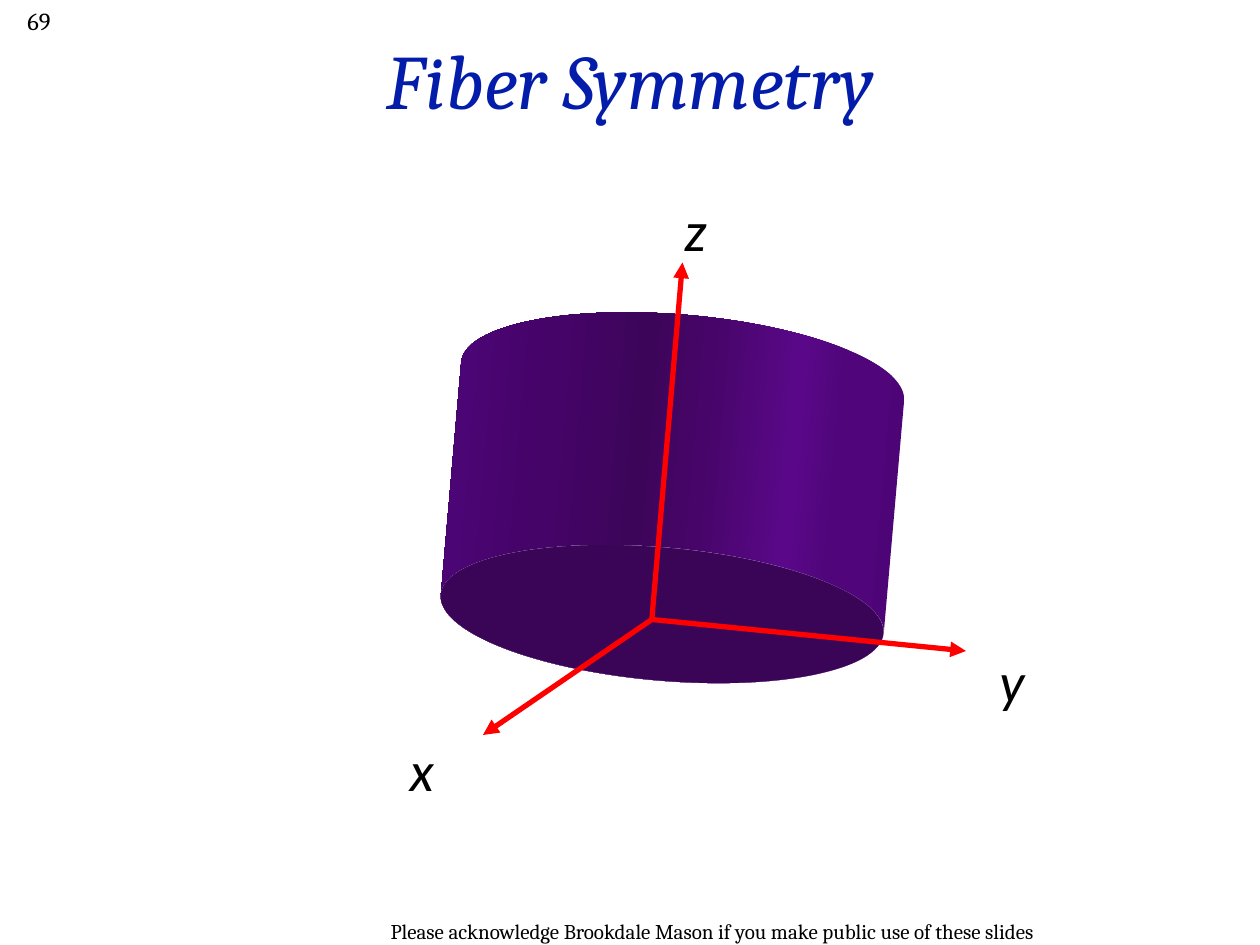
from copy import deepcopy

from lxml.etree import SubElement
from pptx import Presentation
from pptx.dml.color import RGBColor
from pptx.enum.shapes import MSO_CONNECTOR, MSO_SHAPE
from pptx.enum.text import MSO_ANCHOR, PP_ALIGN
from pptx.oxml.ns import qn
from pptx.util import Pt

THEME = {
    "title": RGBColor.from_string("031CAA"),
    "text": RGBColor.from_string("000000"),
    "axis": RGBColor.from_string("FF0000"),
    "base": RGBColor.from_string("3A0557"),
    # position in percent from the right edge of the wall, colour
    "wall": [(0, "4C0476"), (18, "50067A"), (27, "5A0889"), (45, "470569"),
             (57, "3D055A"), (75, "450468"), (100, "4E0579")],
    "serif": "Cambria",
    "sans": "Calibri",
    "title_size": Pt(44),
    "axis_size": Pt(32),
    "number_size": Pt(14),
    "footer_size": Pt(12),
}


def write(box, text, font, size, color, align, italic=False):
    box.text_frame.text = text
    para = box.text_frame.paragraphs[0]
    para.alignment = align
    span = para.runs[0].font
    span.name, span.size, span.italic = font, size, italic
    span.color.rgb = color


def add_solid(preset, center_x, center_y, width, height, rotation):
    """Add an unlined preset shape around its centre."""
    solid = page.shapes.add_shape(
        preset, Pt(center_x - width / 2), Pt(center_y - height / 2),
        Pt(width), Pt(height))
    solid.rotation = rotation
    solid.shadow.inherit = False
    solid.line.fill.background()
    return solid


deck = Presentation()
deck.slide_width, deck.slide_height = Pt(720), Pt(540)
page = deck.slides.add_slide(deck.slide_layouts[5])

# Title
title = page.shapes.title
title.left, title.top, title.width, title.height = Pt(0), Pt(0), Pt(720), Pt(90)
title.text_frame.vertical_anchor = MSO_ANCHOR.MIDDLE
write(title, "Fiber Symmetry", THEME["serif"], THEME["title_size"],
      THEME["title"], PP_ALIGN.CENTER, italic=True)

# Cylinder: a can turned over so that its flat end faces down, and its base
diameter, depth, length, tilt = 254, 76, 133.5, 5
wall = add_solid(MSO_SHAPE.CAN, 384.3, 284.4, diameter, length + depth, 180 + tilt)
wall.adjustments[0] = depth / (length + depth)
wall.fill.gradient()
wall.fill.gradient_angle = 0
stops = wall._element.spPr.find(qn("a:gradFill")).find(qn("a:gsLst"))
for _ in range(len(THEME["wall"]) - len(stops)):
    stops.append(deepcopy(stops[0]))
for stop, (percent, color) in zip(wall.fill.gradient_stops, THEME["wall"]):
    stop.position = percent / 100
    stop.color.rgb = RGBColor.from_string(color)

base = add_solid(MSO_SHAPE.OVAL, 378.3, 350.9, diameter, depth, tilt)
base.fill.solid()
base.fill.fore_color.rgb = THEME["base"]

# Axes: arrow tip, then label left, top and width
origin = (372.5, 354)
axes = [
    ("z", (390, 150), (384, 108, 29)),
    ("y", (552, 372), (564, 366, 32)),
    ("x", (276, 420), (227, 417, 32)),
]
for name, tip, (left, top, width) in axes:
    axis = page.shapes.add_connector(
        MSO_CONNECTOR.STRAIGHT, *[Pt(value) for value in origin + tip])
    axis.line.color.rgb = THEME["axis"]
    axis.line.width = Pt(3)
    SubElement(axis.line._get_or_add_ln(), qn("a:tailEnd"), type="triangle")
    SubElement(axis._element.spPr, qn("a:effectLst"))

    label = page.shapes.add_textbox(Pt(left), Pt(top), Pt(width), Pt(46))
    label.text_frame.word_wrap = False
    write(label, name, THEME["sans"], THEME["axis_size"], THEME["text"],
          PP_ALIGN.LEFT, italic=True)

# Page number and footer
notices = [
    ("69", (0, 0, 36, 30), THEME["number_size"], PP_ALIGN.RIGHT),
    ("Please acknowledge Brookdale Mason if you make public use of these slides",
     (167, 521.5, 480, 18), THEME["footer_size"], PP_ALIGN.CENTER),
]
for text, frame, size, align in notices:
    notice = page.shapes.add_textbox(*[Pt(value) for value in frame])
    notice.text_frame.word_wrap = True
    write(notice, text, THEME["serif"], size, THEME["text"], align)

deck.save("out.pptx")
